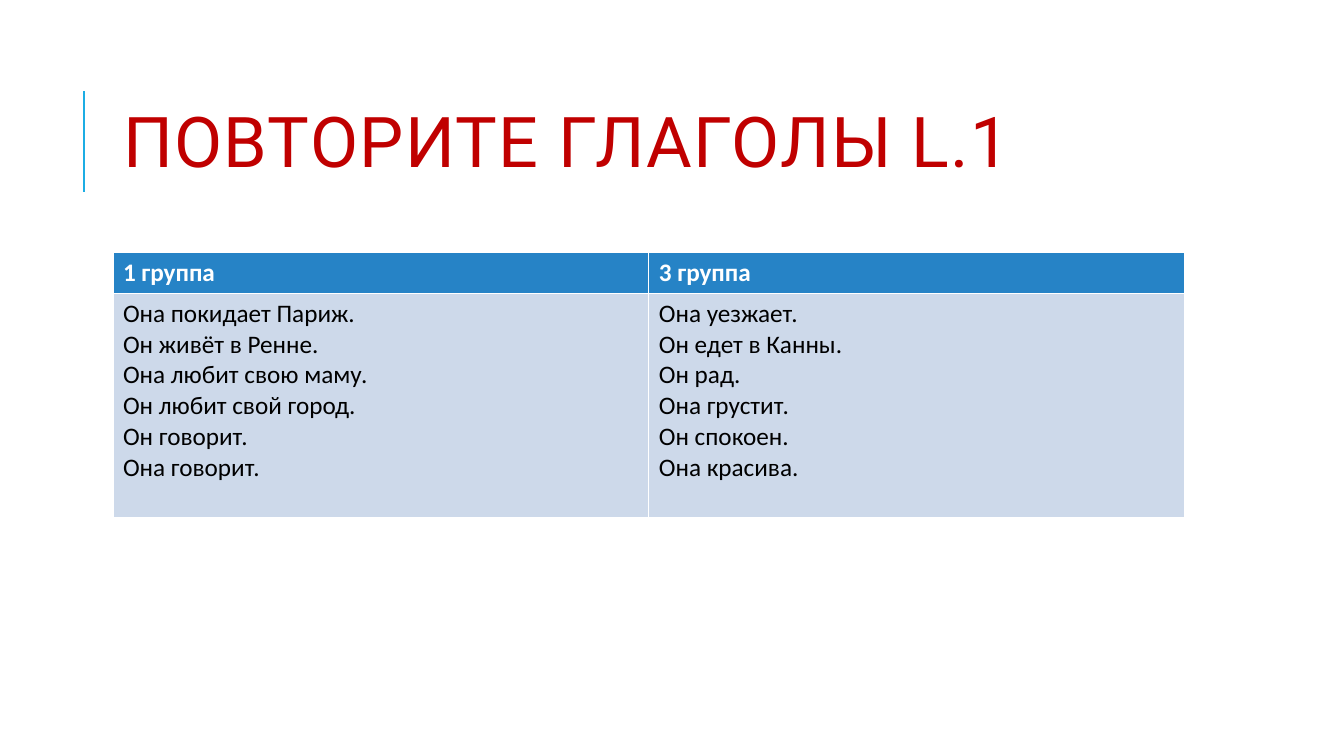
from pptx import Presentation
from pptx.dml.color import RGBColor
from pptx.enum.shapes import MSO_CONNECTOR
from pptx.enum.text import MSO_ANCHOR, MSO_AUTO_SIZE, PP_ALIGN
from pptx.oxml.ns import qn
from pptx.util import Inches, Pt
from lxml import etree

STRAIGHT = MSO_CONNECTOR.STRAIGHT
MIDDLE = MSO_ANCHOR.MIDDLE
NO_FIT = MSO_AUTO_SIZE.NONE
LEFT = PP_ALIGN.LEFT

WHITE = RGBColor(0xFF, 0xFF, 0xFF)
BLACK = RGBColor(0x00, 0x00, 0x00)
RED = RGBColor(0xC0, 0x00, 0x00)
CYAN = RGBColor(0x1C, 0xAD, 0xE4)
HEADER_BLUE = RGBColor(0x26, 0x83, 0xC6)
BODY_BLUE = RGBColor(0xCD, 0xD9, 0xEA)

TITLE_ONLY = 5
VERB_GROUPS = {
    "1 группа": [
        "Она покидает Париж.",
        "Он живёт в Ренне.",
        "Она любит свою маму.",
        "Он любит свой город.",
        "Он говорит.",
        "Она говорит.",
    ],
    "3 группа": [
        "Она уезжает.",
        "Он едет в Канны.",
        "Он рад.",
        "Она грустит.",
        "Он спокоен.",
        "Она красива.",
    ],
}


def add_heading(slide, left, top, width, height):
    # Accent rule left of the title
    rule_x = left - Inches(0.29)
    rule_top = top + Inches(0.26)
    accent = slide.shapes.add_connector(
        STRAIGHT, rule_x, rule_top + Inches(1), rule_x, rule_top)
    accent.line.color.rgb = CYAN
    accent.line.width = Pt(1.5)
    etree.SubElement(accent._element.spPr, qn("a:effectLst"))

    # Title
    heading = slide.shapes.title
    heading.left, heading.top = left, top
    heading.width, heading.height = width, height
    frame = heading.text_frame
    frame.text = "ПОВТОРИТЕ ГЛАГОЛЫ L.1"
    frame.vertical_anchor = MIDDLE
    frame.auto_size = NO_FIT
    frame.word_wrap = True
    paragraph = frame.paragraphs[0]
    paragraph.alignment = LEFT
    paragraph.line_spacing = 0.8
    run = paragraph.runs[0]
    run.font.name = "Roboto"
    run.font.size = Pt(50)
    run.font.color.rgb = RED
    run.font._element.set("spc", "100")


def fill_cell(cell, text, fill, color, bold):
    cell.fill.solid()
    cell.fill.fore_color.rgb = fill
    cell.text_frame.text = text
    for paragraph in cell.text_frame.paragraphs:
        for run in paragraph.runs:
            run.font.name = "Calibri"
            run.font.size = Pt(18)
            run.font.bold = bold
            run.font.color.rgb = color


def add_verb_table(slide, left, top, width, height):
    verbs = slide.shapes.add_table(
        2, len(VERB_GROUPS), left, top, width, height).table
    verbs.horz_banding = False
    verbs.rows[0].height = Inches(0.41)
    verbs.rows[1].height = height - Inches(0.41)
    for column, (group, sentences) in enumerate(VERB_GROUPS.items()):
        fill_cell(verbs.cell(0, column), group, HEADER_BLUE, WHITE, True)
        fill_cell(verbs.cell(1, column), "\n".join(sentences),
                  BODY_BLUE, BLACK, False)


def main():
    deck = Presentation()
    deck.slide_width = Inches(13.33)
    deck.slide_height = Inches(7.5)
    slide = deck.slides.add_slide(deck.slide_layouts[TITLE_ONLY])
    left, width = Inches(1.12), Inches(10.63)
    add_heading(slide, left, Inches(0.64), width, Inches(1.64))
    add_verb_table(slide, left, Inches(2.5), width, Inches(2.64))
    deck.save("out.pptx")


if __name__ == "__main__":
    main()
